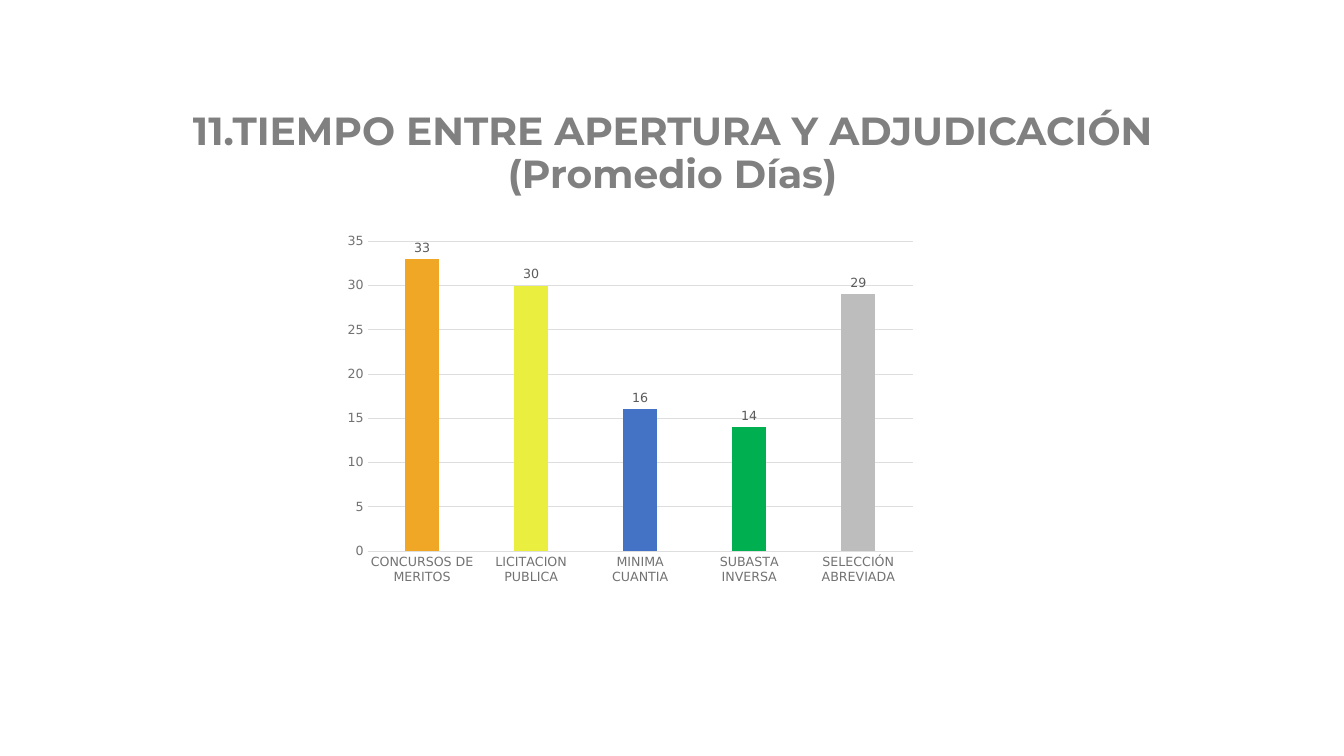
from pptx import Presentation
from pptx.chart.data import CategoryChartData
from pptx.dml.color import RGBColor
from pptx.enum.chart import XL_CHART_TYPE, XL_LABEL_POSITION, XL_TICK_MARK
from pptx.enum.text import MSO_ANCHOR, MSO_AUTO_SIZE, PP_ALIGN
from pptx.util import Inches, Pt

BARS = [
    ("CONCURSOS DE MERITOS", 33, "EFA725"),
    ("LICITACION PUBLICA", 30, "EAEE3E"),
    ("MINIMA CUANTIA", 16, "4472C4"),
    ("SUBASTA INVERSA", 14, "00B050"),
    ("SELECCIÓN ABREVIADA", 29, "BDBDBD"),
]
GRID = "DEDEDE"


def assign(item, values):
    """Set each named attribute of an object."""
    for name, value in values.items():
        setattr(item, name, value)


def paint(color, code):
    """Apply a hex colour to a colour format."""
    color.rgb = RGBColor.from_string(code)


def style(font, face, size, code, bold=False):
    """Set the face, size, colour and weight of a font."""
    assign(font, {"name": face, "size": Pt(size), "bold": bold})
    paint(font.color, code)


def rule(line, code):
    """Draw a thin line in one colour."""
    line.width = Pt(0.75)
    paint(line.color, code)


def place(shape, left, top, width, height):
    """Move and size a shape in inches."""
    assign(shape, {"left": Inches(left), "top": Inches(top),
                   "width": Inches(width), "height": Inches(height)})


def add_title(slide, text):
    """Fill and format the title placeholder."""
    title = slide.shapes.title
    place(title, 0.92, 0.99, 11.5, 1.01)
    frame = title.text_frame
    frame.text = text
    assign(frame, {"word_wrap": True, "auto_size": MSO_AUTO_SIZE.NONE,
                   "vertical_anchor": MSO_ANCHOR.BOTTOM})
    para = frame.paragraphs[0]
    assign(para, {"alignment": PP_ALIGN.CENTER, "line_spacing": 0.9})
    style(para.runs[0].font, "Montserrat", 28, "808080", True)


def format_axis(axis):
    """Give an axis small grey labels and no ticks."""
    assign(axis, {"major_tick_mark": XL_TICK_MARK.NONE,
                  "minor_tick_mark": XL_TICK_MARK.NONE})
    style(axis.tick_labels.font, "DejaVu Sans", 9, "727272")


def add_labels(plot):
    """Show each value above its bar."""
    plot.has_data_labels = True
    labels = plot.data_labels
    assign(labels, {"show_value": True,
                    "position": XL_LABEL_POSITION.OUTSIDE_END})
    style(labels.font, "DejaVu Sans", 9, "5C5C5C")


def add_bars(slide, bars):
    """Add the column chart with one colour per category."""
    names, values, codes = zip(*bars)
    data = CategoryChartData()
    data.categories = names
    data.add_series("Series 1", values)
    chart = slide.shapes.add_chart(
        XL_CHART_TYPE.COLUMN_CLUSTERED, Inches(3.33), Inches(2.25),
        Inches(5.84), Inches(3.62), data).chart
    assign(chart, {"has_legend": False, "has_title": False})
    style(chart.font, "DejaVu Sans", 10, "262626")

    plot = chart.plots[0]
    assign(plot, {"gap_width": 219, "overlap": -27,
                  "vary_by_categories": False})
    add_labels(plot)
    for index, code in enumerate(codes):
        fill = plot.series[0].points[index].format.fill
        fill.solid()
        paint(fill.fore_color, code)

    format_axis(chart.category_axis)
    rule(chart.category_axis.format.line, GRID)
    scale = chart.value_axis
    format_axis(scale)
    assign(scale, {"minimum_scale": 0, "maximum_scale": 35, "major_unit": 5,
                   "has_major_gridlines": True})
    scale.format.line.fill.background()
    rule(scale.major_gridlines.format.line, GRID)


def main():
    """Build and save the slide."""
    deck = Presentation()
    assign(deck, {"slide_width": Inches(13.33), "slide_height": Inches(7.5)})
    slide = deck.slides.add_slide(deck.slide_layouts[5])
    add_title(slide, "11.TIEMPO ENTRE APERTURA Y ADJUDICACIÓN (Promedio Días)")
    add_bars(slide, BARS)
    deck.save("out.pptx")


if __name__ == "__main__":
    main()
